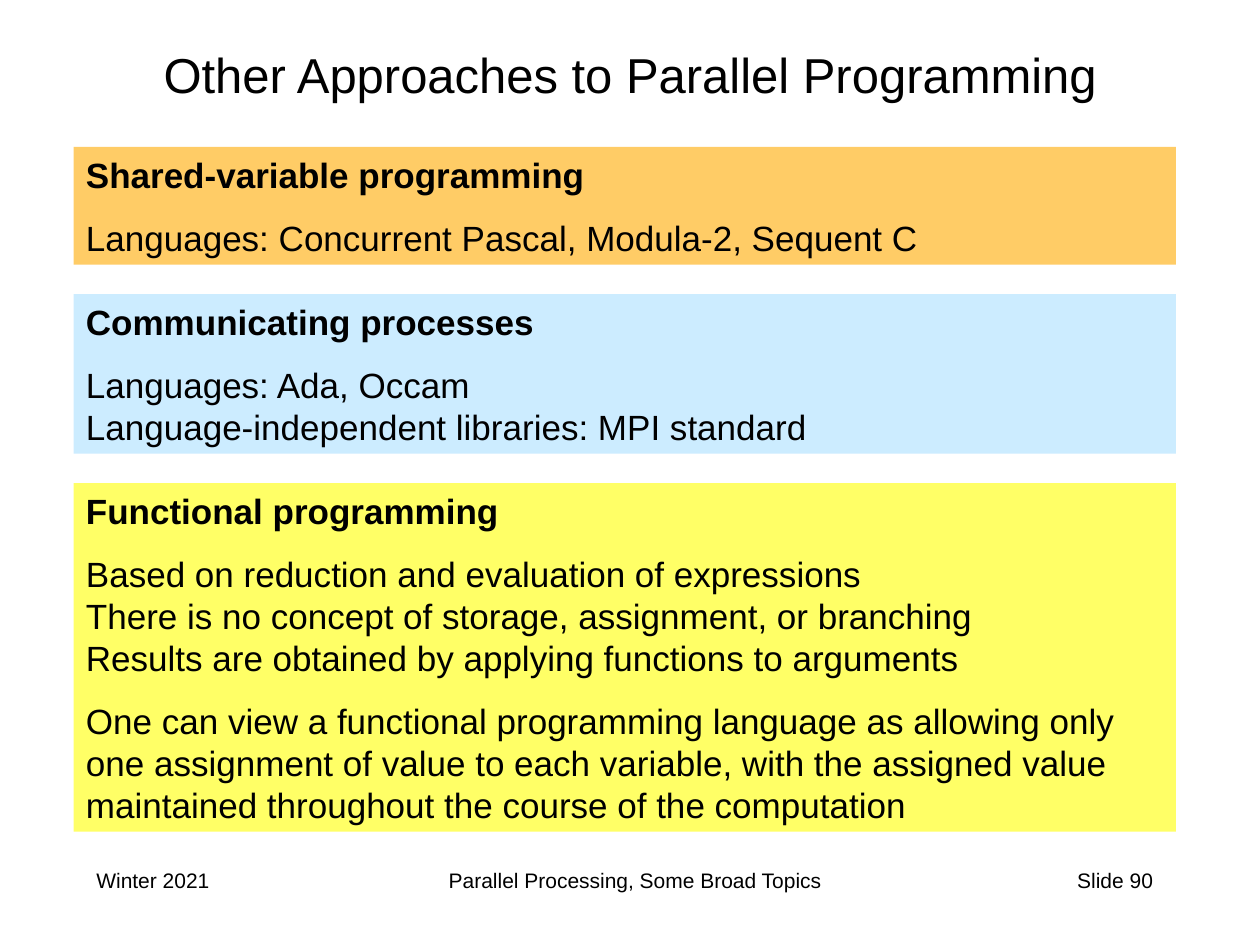
from pptx import Presentation
from pptx.dml.color import RGBColor
from pptx.enum.shapes import MSO_SHAPE
from pptx.enum.text import MSO_ANCHOR, PP_ALIGN
from pptx.util import Inches, Pt

HUES = {"ink": "000000", "orange": "FFCC66", "blue": "CCECFF",
        "yellow": "FFFF66"}
COLS = 120
LINE, GAP, PAD = 24, 12, 3.6  # points: line pitch, space between groups, inset

deck = Presentation()
deck.slide_width, deck.slide_height = Inches(10), Inches(7.5)
slide = deck.slides.add_slide(deck.slide_layouts[6])
cell = deck.slide_width / COLS


def grid(*spots):
    return [round(spot * cell) for spot in spots]


def style(para, **form):
    """Set the font of a paragraph from format values."""
    for key, val in {"name": "Arial", **form}.items():
        setattr(para.font, key, val)
    para.font.color.rgb = RGBColor.from_string(HUES["ink"])


# Single lines: text, place on the grid, alignment, anchor, size
lines = [
    ("Winter 2021", (8, 82, 25, 6), PP_ALIGN.LEFT, MSO_ANCHOR.TOP, 12),
    ("Parallel Processing, Some Broad Topics", (29, 82, 63, 6),
     PP_ALIGN.CENTER, MSO_ANCHOR.TOP, 12),
    ("Slide 90", (86, 82, 25, 6), PP_ALIGN.RIGHT, MSO_ANCHOR.TOP, 12),
    ("Other Approaches to Parallel Programming", (4, 3, 112, 8),
     PP_ALIGN.CENTER, MSO_ANCHOR.MIDDLE, 28),
]
for text, spot, align, anchor, size in lines:
    frame = slide.shapes.add_textbox(*grid(*spot)).text_frame
    frame.word_wrap, frame.vertical_anchor = True, anchor
    para = frame.paragraphs[0]
    para.text, para.alignment = text, align
    style(para, size=Pt(size))

# Panels: fill, top row, count of drawn lines, groups of paragraphs
panels = [
    ("orange", 14, 2, [
        ["Shared-variable programming"],
        ["Languages: Concurrent Pascal, Modula-2, Sequent C"]]),
    ("blue", 28, 3, [
        ["Communicating processes"],
        ["Languages: Ada, Occam",
         "Language-independent libraries: MPI standard"]]),
    ("yellow", 46, 7, [
        ["Functional programming"],
        ["Based on reduction and evaluation of expressions",
         "There is no concept of storage, assignment, or branching",
         "Results are obtained by applying functions to arguments"],
        ["One can view a functional programming language as allowing only "
         "one assignment of value to each variable, with the assigned value "
         "maintained throughout the course of the computation"]]),
]
for hue, top, count, groups in panels:
    high = Pt(count * LINE + (len(groups) - 1) * GAP + 2 * PAD)
    box = slide.shapes.add_shape(MSO_SHAPE.RECTANGLE, *grid(7, top, 105), high)
    box.shadow.inherit = False
    box.fill.solid()
    box.fill.fore_color.rgb = RGBColor.from_string(HUES[hue])
    box.line.fill.background()
    frame = box.text_frame
    frame.word_wrap, frame.vertical_anchor = True, MSO_ANCHOR.TOP
    for g, group in enumerate(groups):
        for i, text in enumerate(group):
            first = g == i == 0
            para = frame.paragraphs[0] if first else frame.add_paragraph()
            para.text, para.alignment = text, PP_ALIGN.LEFT
            para.line_spacing = Pt(LINE)
            para.space_before = Pt(GAP if g and i == 0 else 0)
            style(para, size=Pt(20), bold=first)

deck.save("out.pptx")
